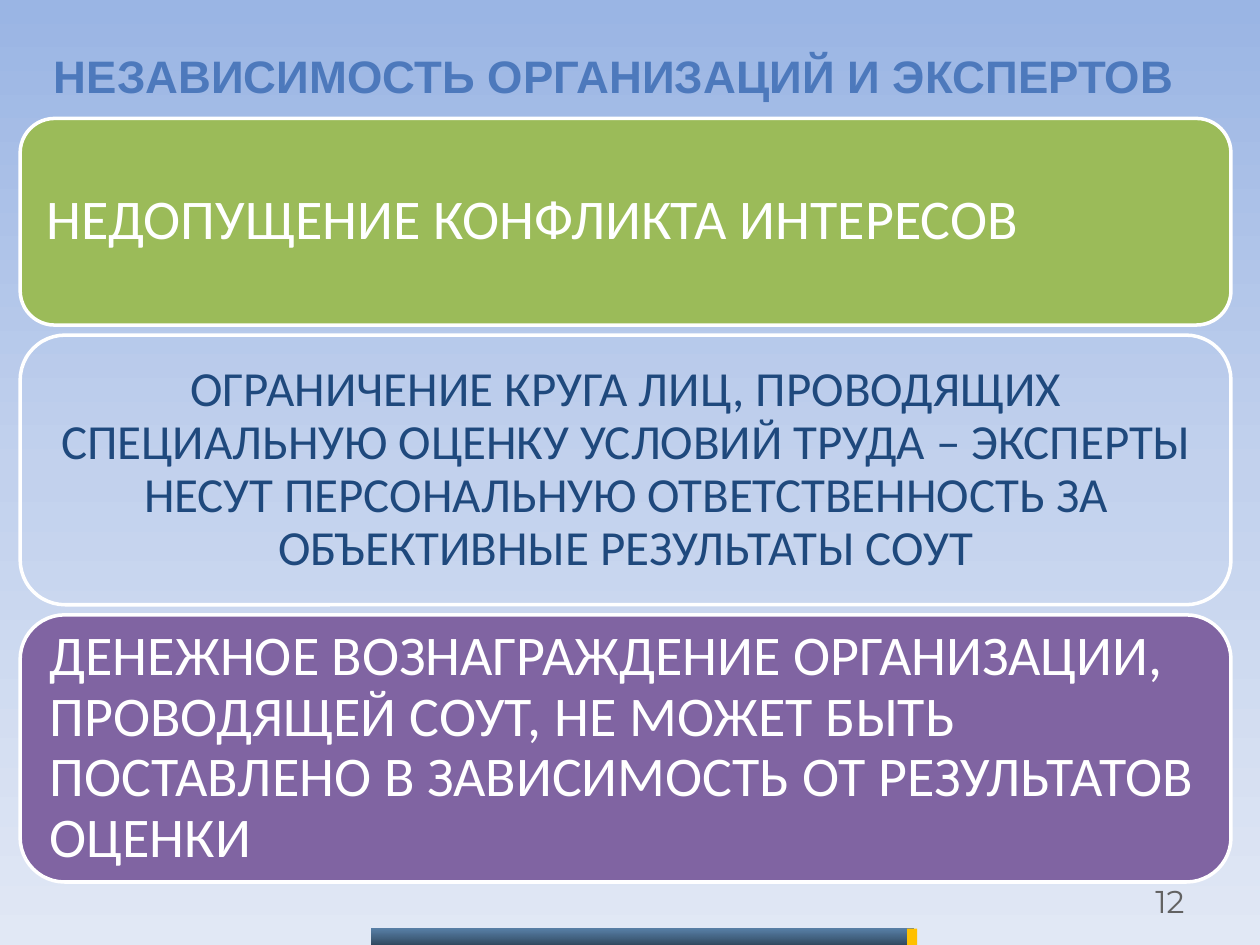
import pptx
import pptx.dml.color
import pptx.enum.shapes
import pptx.enum.text
import pptx.oxml
import pptx.oxml.ns
import pptx.util
from lxml import etree

RGBColor = pptx.dml.color.RGBColor
Align = pptx.enum.text.PP_ALIGN
Shape = pptx.enum.shapes.MSO_SHAPE
qn = pptx.oxml.ns.qn

WIDTH, HEIGHT = pptx.util.Inches(10), pptx.util.Inches(7.5)

WHITE = RGBColor(0xFF, 0xFF, 0xFF)
GREEN = RGBColor(0x9B, 0xBB, 0x59)
PURPLE = RGBColor(0x80, 0x64, 0xA2)
NAVY = RGBColor(0x1F, 0x49, 0x7D)
TITLE_BLUE = RGBColor(0x4D, 0x79, 0xBC)
GREY = RGBColor(0x62, 0x62, 0x62)
AMBER = RGBColor(0xFF, 0xC0, 0x00)
SKY_TOP = RGBColor(0x9A, 0xB5, 0xE4)
SKY_MIDDLE = RGBColor(0xC2, 0xD1, 0xED)
SKY_BOTTOM = RGBColor(0xE1, 0xE8, 0xF5)
BAR_TOP = RGBColor(0x00, 0x3C, 0x73)
BAR_BOTTOM = RGBColor(0x00, 0x1C, 0x35)

# Text, size, text colour, fill, alignment, inset and height in inches
PRINCIPLES = [
    ("НЕДОПУЩЕНИЕ КОНФЛИКТА ИНТЕРЕСОВ",
     32, WHITE, GREEN, Align.LEFT, 0.13, 1.64),
    ("ОГРАНИЧЕНИЕ КРУГА ЛИЦ, ПРОВОДЯЩИХ СПЕЦИАЛЬНУЮ ОЦЕНКУ УСЛОВИЙ ТРУДА – "
     "ЭКСПЕРТЫ НЕСУТ ПЕРСОНАЛЬНУЮ ОТВЕТСТВЕННОСТЬ ЗА ОБЪЕКТИВНЫЕ РЕЗУЛЬТАТЫ СОУТ",
     28, NAVY, None, Align.CENTER, 0.12, 2.14),
    ("ДЕНЕЖНОЕ ВОЗНАГРАЖДЕНИЕ ОРГАНИЗАЦИИ, ПРОВОДЯЩЕЙ СОУТ, НЕ МОЖЕТ БЫТЬ "
     "ПОСТАВЛЕНО В ЗАВИСИМОСТЬ ОТ РЕЗУЛЬТАТОВ ОЦЕНКИ",
     32, WHITE, PURPLE, Align.LEFT, 0.13, 2.12),
]


def box(left, top, width, height):
    return tuple(pptx.util.Inches(v) for v in (left, top, width, height))


def set_gradient(fill, owner, stops):
    """Fill top to bottom with (position %, colour, opacity %) stops."""
    fill.gradient()
    fill.gradient_angle = 270
    stop_list = next(owner.iter(qn("a:gsLst")))
    for old_stop in list(stop_list):
        stop_list.remove(old_stop)
    for position, colour, opacity in stops:
        stop = etree.SubElement(stop_list, qn("a:gs"), pos=str(position * 1000))
        rgb = etree.SubElement(stop, qn("a:srgbClr"), val=str(colour))
        if opacity < 100:
            etree.SubElement(rgb, qn("a:alpha"), val=str(opacity * 1000))


def write(shape, text, size, font, colour, align, bold=False):
    frame = shape.text_frame
    frame.word_wrap = True
    frame.vertical_anchor = pptx.enum.text.MSO_ANCHOR.MIDDLE
    frame.text = text
    paragraph = frame.paragraphs[0]
    paragraph.alignment = align
    run_font = paragraph.runs[0].font
    run_font.name, run_font.size, run_font.bold = font, pptx.util.Pt(size), bold
    run_font.color.rgb = colour
    return frame


def add_plain_shape(slide, kind, area):
    shape = slide.shapes.add_shape(kind, *area)
    shape.shadow.inherit = False
    shape.line.fill.background()
    return shape


def add_principles(slide, area):
    """Stack the panels in the area, sharing the spare height as equal gaps."""
    left, top, width, height = area
    heights = [pptx.util.Inches(row[-1]) for row in PRINCIPLES]
    gap = (height - sum(heights)) // (len(heights) - 1)
    for row, panel_height in zip(PRINCIPLES, heights):
        text, size, colour, fill, align, inset, _ = row
        panel = add_plain_shape(slide, Shape.ROUNDED_RECTANGLE,
                                (left, top, width, panel_height))
        if fill is None:
            panel.fill.background()
        else:
            panel.fill.solid()
            panel.fill.fore_color.rgb = fill
        panel.line.color.rgb = WHITE
        panel.line.width = pptx.util.Pt(2)
        frame = write(panel, text, size, "Calibri", colour, align)
        frame.paragraphs[0].line_spacing = 0.9
        frame.margin_left = frame.margin_right = pptx.util.Inches(inset)
        frame.margin_top = frame.margin_bottom = pptx.util.Inches(inset)
        top += panel_height + gap


def add_footer_bar(slide, area):
    """Blue bar with an amber tip at its right end."""
    left, top, width, height = area
    bar = add_plain_shape(slide, Shape.RECTANGLE, area)
    set_gradient(bar.fill, bar.element, [(0, BAR_TOP, 60), (100, BAR_BOTTOM, 80)])
    tip_width = pptx.util.Inches(0.08)
    tip_left = left + width - pptx.util.Inches(0.05)
    tip = add_plain_shape(slide, Shape.RECTANGLE, (tip_left, top, tip_width, height))
    tip.fill.solid()
    tip.fill.fore_color.rgb = AMBER


def main():
    deck = pptx.Presentation()
    deck.slide_width, deck.slide_height = WIDTH, HEIGHT
    slide = deck.slides.add_slide(deck.slide_layouts[6])
    set_gradient(slide.background.fill, slide.element,
                 [(0, SKY_TOP, 100), (50, SKY_MIDDLE, 100), (100, SKY_BOTTOM, 100)])

    page_number = slide.shapes.add_textbox(*box(7.17, 6.95, 2.33, 0.4))
    write(page_number, "12", 18, "Montserrat", GREY, Align.RIGHT)
    title = slide.shapes.add_textbox(*box(0.27, 0.21, 9.21, 0.77))
    write(title, "НЕЗАВИСИМОСТЬ ОРГАНИЗАЦИЙ И ЭКСПЕРТОВ", 26, "Arial",
          TITLE_BLUE, Align.CENTER, bold=True)
    add_footer_bar(slide, box(2.95, 7.37, 4.3, 0.13))
    add_principles(slide, box(0.16, 0.94, 9.61, 6.06))
    deck.save("out.pptx")


if __name__ == "__main__":
    main()
